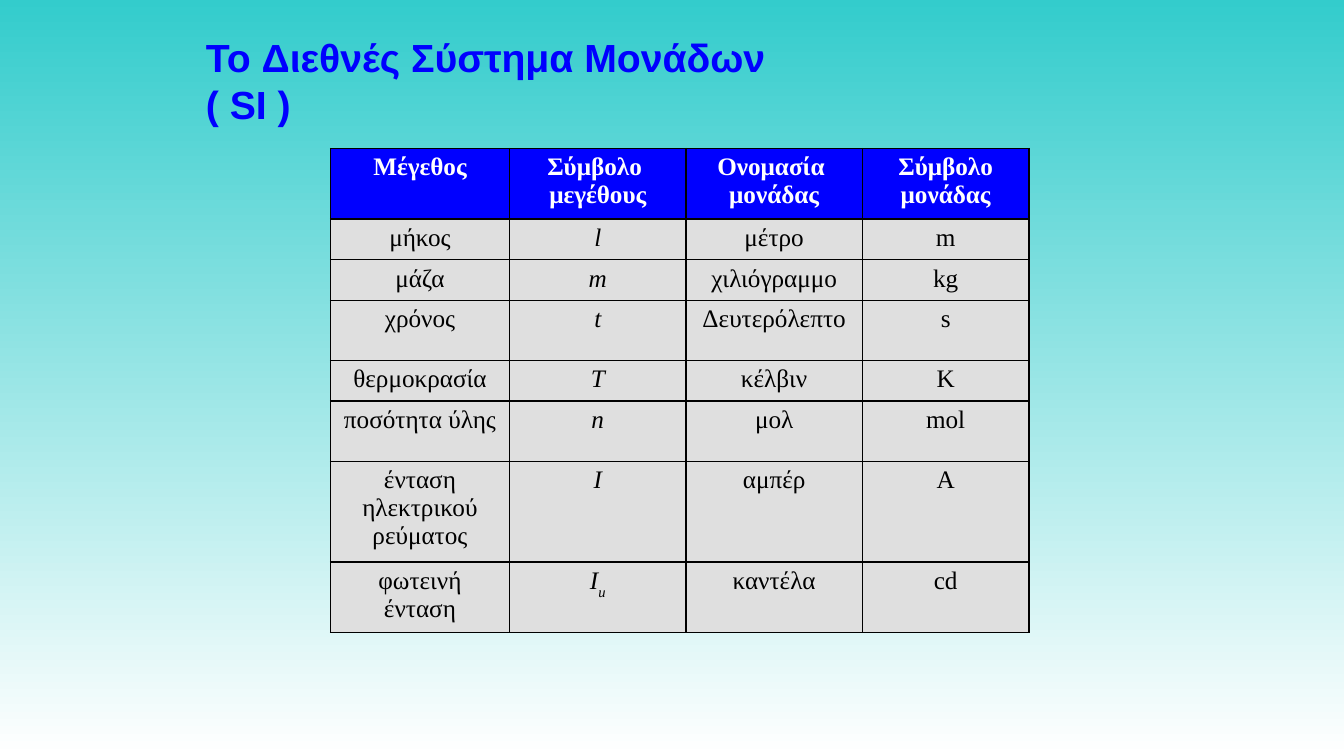
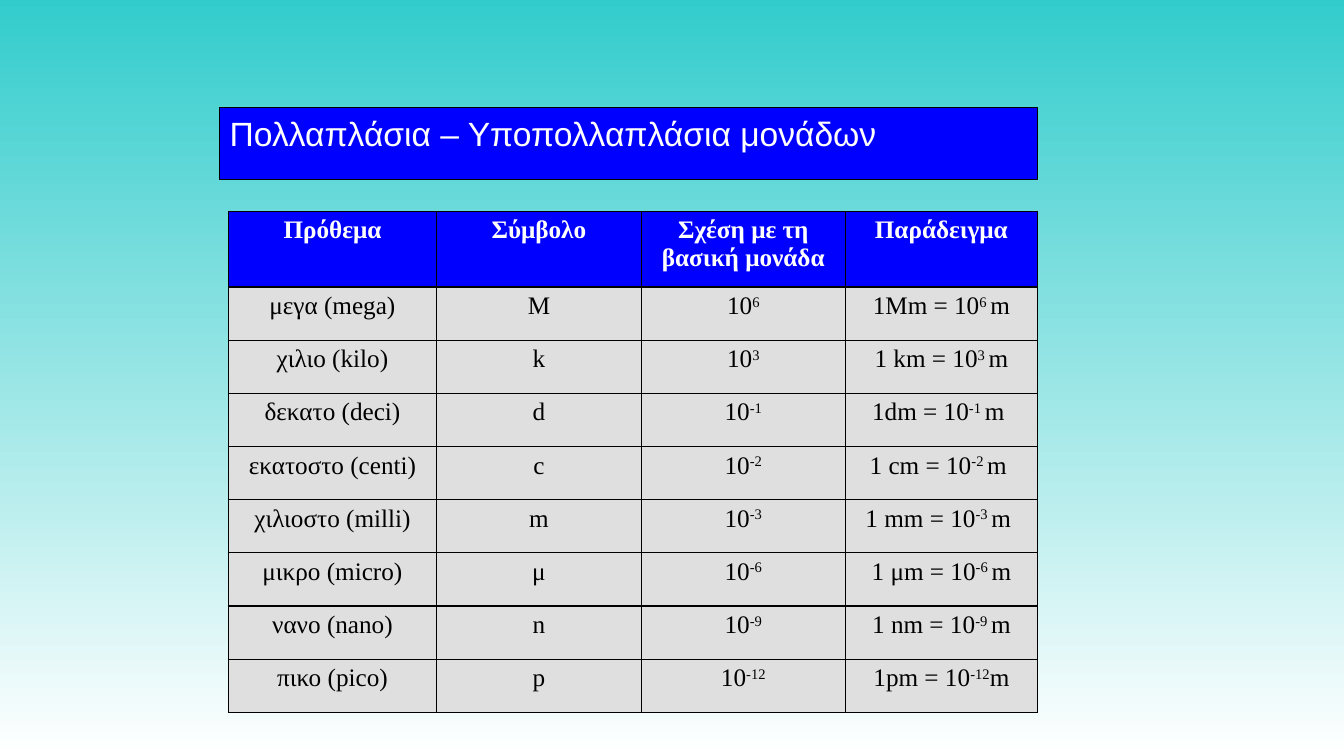
from pptx import Presentation
from pptx.dml.color import RGBColor
from pptx.enum.shapes import MSO_SHAPE
from pptx.enum.text import MSO_ANCHOR, PP_ALIGN
from pptx.oxml import parse_xml
from pptx.oxml.ns import nsdecls
from pptx.util import Pt

BLUE, WHITE, BLACK, GREY, TEAL = "0000FF", "FFFFFF", "000000", "DFDFDF", "33CCCC"
SANS, SERIF = "Arial", "Times New Roman"


def hue(code):
    return RGBColor.from_string(code)


def paint(fill, code):
    fill.solid()
    fill.fore_color.rgb = hue(code)


def say(frame, words, size=18, font=SERIF, color=BLACK, bold=False,
        italic=False, align=PP_ALIGN.LEFT, shift=0):
    """Write one paragraph per line; every second part between bars is
    shifted off the baseline by shift percent."""
    for row, line in enumerate(words.split("\n")):
        par = frame.add_paragraph() if row else frame.paragraphs[0]
        par.alignment = align
        for spot, part in enumerate(line.split("|")):
            run = par.add_run()
            run.text = part
            face = run.font
            face.size, face.name = Pt(size), font
            face.bold, face.italic = bold, italic
            face.color.rgb = hue(color)
            if spot % 2:
                run._r.get_or_add_rPr().set("baseline", str(shift * 1000))


def edge(cell, color=BLACK, width=1):
    """Draw a line on all four sides of a cell."""
    props = cell._tc.get_or_add_tcPr()
    for side in "LRTB":
        props.append(parse_xml(
            f'<a:ln{side} {nsdecls("a")} w="{Pt(width)}"><a:solidFill>'
            f'<a:srgbClr val="{color}"/></a:solidFill></a:ln{side}>'))


class Deck:
    """The shared style and the slide being filled."""

    def __init__(self, width, height):
        self.show = Presentation()
        self.show.slide_width, self.show.slide_height = Pt(width), Pt(height)
        self.slide = None
        fill = self.show.slide_master.background.fill
        fill.gradient()
        fill.gradient_angle = 270
        for stop, place, code in zip(fill.gradient_stops, (0, 1), (TEAL, WHITE)):
            stop.position, stop.color.rgb = place, hue(code)

    def page(self):
        self.slide = self.show.slides.add_slide(self.show.slide_layouts[6])

    def title(self, words, *box):
        frame = self.slide.shapes.add_textbox(*map(Pt, box)).text_frame
        frame.word_wrap = True
        frame.vertical_anchor = MSO_ANCHOR.MIDDLE
        say(frame, words, size=28, font=SANS, color=BLUE, bold=True)

    def band(self, words, *box):
        shape = self.slide.shapes.add_shape(MSO_SHAPE.RECTANGLE, *map(Pt, box))
        shape.shadow.inherit = False
        paint(shape.fill, BLUE)
        shape.line.color.rgb = hue(BLACK)
        shape.line.width = Pt(0.75)
        shape.text_frame.vertical_anchor = MSO_ANCHOR.TOP
        say(shape.text_frame, words, size=24, font=SANS, color=WHITE)

    def table(self, data, left, top, wide, high, slant=None, shift=0):
        """Build a grid with a blue head row; slant is the italic column."""
        grid = self.slide.shapes.add_table(
            len(high), len(wide), Pt(left), Pt(top),
            Pt(sum(wide)), Pt(sum(high))).table
        grid.first_row = grid.horz_banding = False
        for col, width in zip(grid.columns, wide):
            col.width = Pt(width)
        for row, height in zip(grid.rows, high):
            row.height = Pt(height)
        for y, line in enumerate(data):
            head = y == 0
            for x, words in enumerate(line):
                cell = grid.cell(y, x)
                edge(cell)
                paint(cell.fill, BLUE if head else GREY)
                say(cell.text_frame, words, color=WHITE if head else BLACK,
                    bold=head, italic=x == slant and not head,
                    align=PP_ALIGN.CENTER, shift=shift)


UNITS = [
    ("Μέγεθος", "Σύμβολο \nμεγέθους", "Ονομασία \nμονάδας", "Σύμβολο\nμονάδας"),
    ("μήκος", "l", "μέτρο", "m"),
    ("μάζα", "m", "χιλιόγραμμο", "kg"),
    ("χρόνος", "t", "Δευτερόλεπτο", "s"),
    ("θερμοκρασία", "T", "κέλβιν", "K"),
    ("ποσότητα ύλης", "n", "μολ", "mol"),
    ("ένταση ηλεκτρικού ρεύματος", "I", "αμπέρ", "A"),
    ("φωτεινή ένταση", "I|u", "καντέλα", "cd"),
]
SCALES = [
    ("Πρόθεμα", "Σύμβολο", "Σχέση με τη βασική μονάδα", "Παράδειγμα"),
    ("μεγα (mega)", "M", "10|6", "1Mm = 10|6 |m"),
    ("χιλιο (kilo)", "k", "10|3", "1 km = 10|3 |m"),
    ("δεκατο (deci)", "d", "10|-1", "1dm = 10|-1 |m "),
    ("εκατοστο (centi)", "c", "10|-2", "1 cm = 10|-2 |m "),
    ("χιλιοστο (milli)", "m", "10|-3", "1 mm = 10|-3 |m "),
    ("μικρο (micro)", "μ", "10|-6", "1 μm = 10|-6 |m"),
    ("νανο (nano)", "n", "10|-9", "1 nm = 10|-9 |m"),
    ("πικο (pico)", "p", "10|-12", "1pm = 10|-12|m"),
]


def main():
    deck = Deck(960, 540)

    deck.page()
    deck.title("To Διεθνές Σύστημα Μονάδων\n( SI )", 140, 20, 471, 75)
    deck.table(UNITS, 236, 106, (128, 126, 126, 119),
               (50, 29, 29, 43, 29, 43, 72, 50), slant=1, shift=-30)

    deck.page()
    deck.band("Πολλαπλάσια – Υποπολλαπλάσια μονάδων", 157, 77, 584, 51)
    deck.table(SCALES, 163, 151, (149, 146, 146, 137),
               [54] + [38] * 8, shift=30)

    deck.show.save("out.pptx")


if __name__ == "__main__":
    main()
